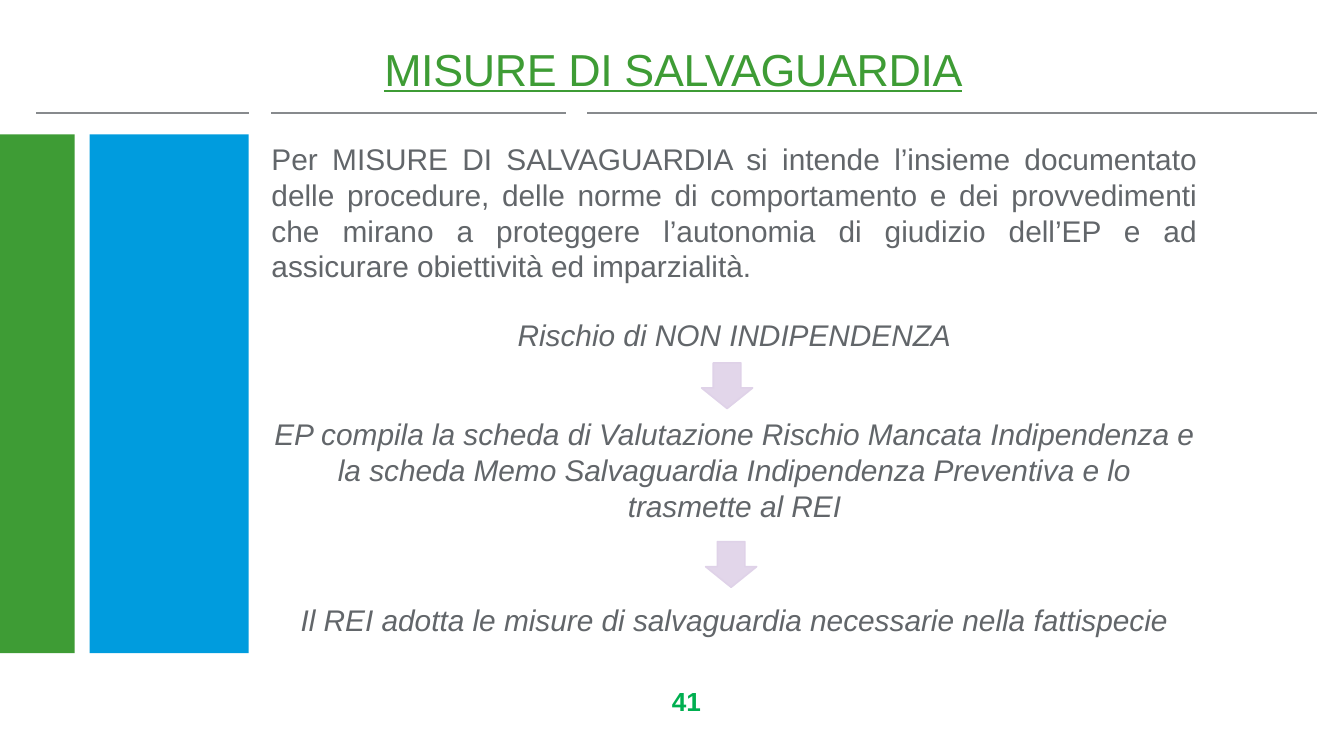
from lxml.etree import SubElement
from pptx import Presentation
from pptx.dml.color import RGBColor
from pptx.enum.shapes import MSO_CONNECTOR as CONN, MSO_SHAPE as SHAPE
from pptx.enum.text import PP_ALIGN as ALIGN
from pptx.oxml.ns import qn
from pptx.util import Inches, Pt

GREEN = RGBColor(0x3E, 0x9C, 0x35)
BLUE = RGBColor(0x00, 0x9C, 0xDE)
GREY = RGBColor(0x87, 0x8A, 0x8D)
TEXT = RGBColor(0x62, 0x66, 0x6A)
LILAC = RGBColor(0xDF, 0xD2, 0xE8)
NUMBER = RGBColor(0x00, 0xAF, 0x50)

BODY = [
    ("Per MISURE DI SALVAGUARDIA si intende l’insieme documentato delle procedure, "
     "delle norme di comportamento e dei provvedimenti che mirano a proteggere "
     "l’autonomia di giudizio dell’EP e ad assicurare obiettività ed imparzialità.", 0.9),
    ("Rischio di NON INDIPENDENZA", 17.9),
    ("EP compila la scheda di Valutazione Rischio Mancata Indipendenza e "
     "la scheda Memo Salvaguardia Indipendenza Preventiva e lo\vtrasmette al REI", 33.9),
    ("Il REI adotta le misure di salvaguardia necessarie nella fattispecie", 42),
]


def add_text(s, box, inset=(0, 0.01)):
    """Add a wrapping text box with the given left and top insets."""
    tf = s.shapes.add_textbox(*map(Inches, box)).text_frame
    tf.word_wrap = True
    tf.margin_left, tf.margin_top = map(Inches, inset)
    tf.margin_right = tf.margin_bottom = 0
    return tf


def style(p, size, color, spacing=0, **flags):
    """Format every run of a paragraph."""
    for r in p.runs:
        r.font.name, r.font.size = "Arial", Pt(size)
        r.font.color.rgb = color
        for name, value in flags.items():
            setattr(r.font, name, value)
        r._r.get_or_add_rPr().set("spc", str(spacing))


def add_line_text(s, box, text, size, color, before, inset, spacing=0, **flags):
    """Place a single styled line of text."""
    p = add_text(s, box, inset).paragraphs[0]
    p.text, p.space_before = text, Pt(before)
    style(p, size, color, spacing, **flags)


def add_bars(s, box):
    """Fill the box with a green and a blue column."""
    x, y, w, h = box
    for start, share, color in ((0, 0.3, GREEN), (0.36, 0.64, BLUE)):
        sp = s.shapes.add_shape(SHAPE.RECTANGLE, *map(Inches, (x + start * w, y, share * w, h)))
        sp.shadow.inherit = False
        sp.fill.solid()
        sp.fill.fore_color.rgb = color
        sp.line.fill.background()


def add_rules(s, y):
    """Draw the three rules under the title."""
    for x1, x2 in ((0.27, 1.85), (2.02, 4.21), (4.37, 9.8)):
        c = s.shapes.add_connector(CONN.STRAIGHT, *map(Inches, (x1, y, x2, y)))
        c.line.color.rgb, c.line.width = GREY, Pt(0.75)
        SubElement(c._element.spPr, qn("a:effectLst"))


def add_body(s, box):
    """Write the definition and the three centred steps."""
    tf = add_text(s, box)
    for i, (text, before) in enumerate(BODY):
        p = tf.add_paragraph() if i else tf.paragraphs[0]
        p.text = text
        p.alignment = ALIGN.CENTER if i else ALIGN.JUSTIFY
        p.line_spacing, p.space_before = Pt(19.1), Pt(before)
        style(p, 16, TEXT, italic=bool(i))


def add_arrow(s, box):
    """Draw a translucent down arrow."""
    sp = s.shapes.add_shape(SHAPE.DOWN_ARROW, *map(Inches, box))
    sp.shadow.inherit = False
    sp.adjustments[0], sp.adjustments[1] = 0.54, 0.45
    sp.fill.solid()
    sp.fill.fore_color.rgb = LILAC
    color = sp._element.spPr.find(qn("a:solidFill"))[0]
    SubElement(color, qn("a:alpha")).set("val", "90000")
    sp.line.color.rgb, sp.line.width = LILAC, Pt(0.85)


def main():
    """Build and save the slide."""
    prs = Presentation()
    prs.slide_width = Inches(10)
    prs.slide_height = prs.slide_width * 9 // 16
    s = prs.slides.add_slide(prs.slide_layouts[6])
    add_bars(s, (0, 1, 1.85, 3.86))
    add_rules(s, 0.84)
    add_body(s, (2.02, 1.04, 6.89, 3.73))
    add_line_text(s, (2.85, 0.3, 4.6, 0.43), "MISURE DI SALVAGUARDIA", 24, GREEN, 1,
                  (0.01, 0.01), -20, underline=True)
    for x, y in ((5.22, 2.7), (5.25, 4.03)):
        add_arrow(s, (x, y, 0.38, 0.34))
    add_line_text(s, (4.96, 5.06, 0.3, 0.29), "41", 14, NUMBER, 3.1, (0.04, 0.04), bold=True)
    prs.save("out.pptx")


if __name__ == "__main__":
    main()
